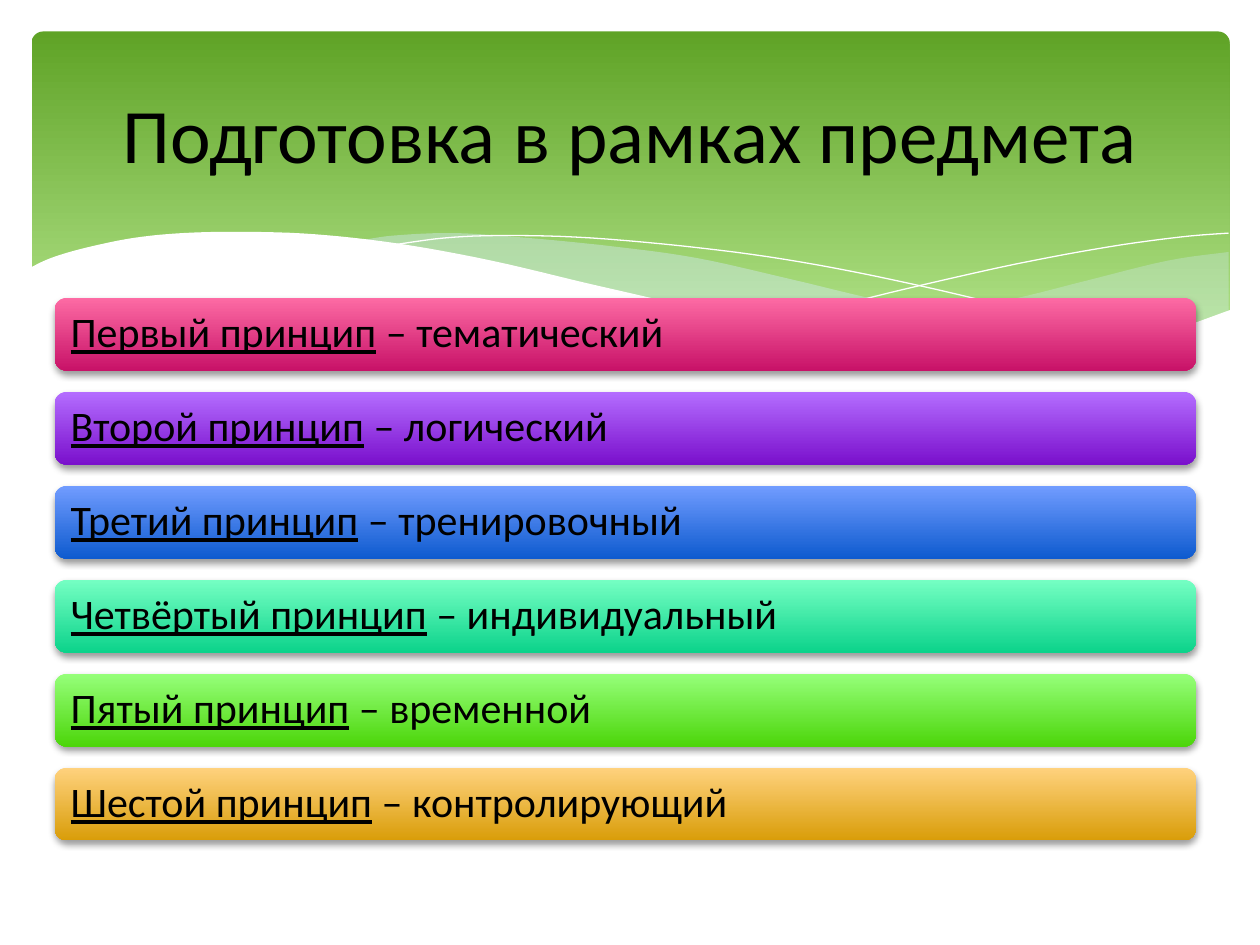
from lxml.etree import SubElement
from pptx import Presentation
from pptx.dml.color import RGBColor
from pptx.enum.shapes import MSO_SHAPE as Shape
from pptx.enum.text import MSO_ANCHOR as Anchor, PP_ALIGN as Align
from pptx.oxml.ns import qn
from pptx.util import Pt

TITLE = "Подготовка в рамках предмета"
PRINCIPLES = [
    ("Первый принцип", "тематический", "FD6BA4", "C81268"),
    ("Второй принцип", "логический", "B46DFF", "7A10CC"),
    ("Третий принцип", "тренировочный", "719CFF", "0E5BCF"),
    ("Четвёртый принцип", "индивидуальный", "75FFC3", "0CD38B"),
    ("Пятый принцип", "временной", "96FF7A", "4CD60A"),
    ("Шестой принцип", "контролирующий", "FFD27E", "D99D09"),
]

RIGHT_WAVE = [
    [(702, 144), (667, 149), (620, 160.6), (580, 170.6), (525, 182), (476, 190.8)],
    [(476, 190.8), (517, 196), (562, 199.4), (601, 199.4), (640, 196), (673, 189),
     (702, 178)],
]
MIDDLE_WAVE = [
    [(643, 196.6), (581, 187), (508, 172.8), (453, 159.8), (399, 147.6), (352, 141),
     (302, 136), (260, 133.2), (225, 134.6), (206, 137.5)],
    [(206, 137.5), (233, 141.1), (261, 146.2), (307, 155.5), (354, 167), (433, 183.6),
     (479, 191.5), (520, 197.3), (565, 200.2), (603, 200.2), (643, 196.6)],
]
FRONT_WAVE = [
    [(703.4, 177), (662, 191), (621, 197), (582, 199.4), (536, 197.3), (481, 190.8),
     (417, 180), (342, 163.4), (281, 149), (228, 139.3), (180, 133.9), (139, 132.5),
     (105, 133.2), (76.3, 136), (48.2, 141.8), (28.8, 147.6), (16.6, 153.4)],
    [(16.6, 237), (703.4, 237)],
]
FALLING_LINE = [[(222, 140.4), (254, 136), (289, 134.6), (338, 136), (401, 141.8),
                 (458, 149.8), (523, 162.7), (598, 180.7), (653, 195.8)]]
RISING_LINE = [[(441, 185), (470, 177), (518, 165), (580, 151), (634, 141),
                (675, 135.4), (702, 133.2)]]

BAR_LEFT, BAR_TOP, BAR_WIDTH, BAR_HEIGHT, BAR_PITCH = 31.2, 170.2, 652.3, 41.6, 53.7
CURVE_STEPS = 6


def color(hex_code):
    return RGBColor.from_string(hex_code)


def smooth(knots):
    if len(knots) < 3:
        return knots
    padded = [knots[0], *knots, knots[-1]]
    curve = [knots[0]]
    for before, start, end, after in zip(padded, padded[1:], padded[2:], padded[3:]):
        for step in range(1, CURVE_STEPS + 1):
            t = step / CURVE_STEPS
            curve.append(tuple(
                b + (c - a) * t / 2 + (2 * a - 5 * b + 4 * c - d) * t**2 / 2
                + (3 * b - a - 3 * c + d) * t**3 / 2
                for a, b, c, d in zip(before, start, end, after)))
    return curve


def add_curve(slide, edges, fill=None, alpha=100, line=None):
    points = [(Pt(x), Pt(y)) for edge in edges for x, y in smooth(edge)]
    builder = slide.shapes.build_freeform(*points[0])
    builder.add_line_segments(points[1:], close=fill is not None)
    curve = builder.convert_to_shape()
    curve.shadow.inherit = False
    if fill:
        curve.fill.solid()
        curve.fill.fore_color.rgb = color(fill)
        tint = curve._element.spPr.find(qn("a:solidFill"))[0]
        SubElement(tint, qn("a:alpha"), val=str(alpha * 1000))
    else:
        curve.fill.background()
    if line:
        curve.line.color.rgb = color(line)
        curve.line.width = Pt(0)
    else:
        curve.line.fill.background()


def add_gradient_box(slide, left, top, width, height, stops, corner=0.17):
    box = slide.shapes.add_shape(Shape.ROUNDED_RECTANGLE,
                                 Pt(left), Pt(top), Pt(width), Pt(height))
    box.adjustments[0] = corner
    box.shadow.inherit = False
    box.line.fill.background()
    box.fill.gradient()
    box.fill.gradient_angle = 270
    for stop, (position, shade) in zip(box.fill.gradient_stops, stops):
        stop.position = position
        stop.color.rgb = color(shade)
    return box


def add_drop_shadow(box):
    effects = box._element.spPr.find(qn("a:effectLst"))
    shadow = SubElement(effects, qn("a:outerShdw"), blurRad=str(Pt(4)),
                        dist=str(Pt(2)), dir="5400000", rotWithShape="0")
    black = SubElement(shadow, qn("a:srgbClr"), val="000000")
    SubElement(black, qn("a:alpha"), val="38000")


def write(frame, *parts, size, align=Align.LEFT, spacing=1.0, underline_first=False):
    frame.word_wrap = True
    frame.vertical_anchor = Anchor.MIDDLE
    paragraph = frame.paragraphs[0]
    paragraph.alignment = align
    paragraph.line_spacing = spacing
    for index, part in enumerate(parts):
        run = paragraph.add_run()
        run.text = part
        run.font.name = "Calibri"
        run.font.size = Pt(size)
        run.font.color.rgb = color("000000")
        run.font.underline = underline_first and index == 0


def main():
    deck = Presentation()
    deck.slide_width, deck.slide_height = Pt(720), Pt(540)
    slide = deck.slides.add_slide(deck.slide_layouts[5])

    add_gradient_box(slide, 18, 18, 684.7, 194.4,
                     [(0, "5FA326"), (0.9, "B2E389")], corner=0.034)
    add_curve(slide, RIGHT_WAVE, fill="D6ECFF", alpha=29)
    add_curve(slide, MIDDLE_WAVE, fill="D6ECFF", alpha=40)
    add_curve(slide, FALLING_LINE, line="FFFFFF")
    add_curve(slide, RISING_LINE, line="FFFFFF")
    add_curve(slide, FRONT_WAVE, fill="FFFFFF")

    for row, (ordinal, principle, light, dark) in enumerate(PRINCIPLES):
        bar = add_gradient_box(slide, BAR_LEFT, BAR_TOP + row * BAR_PITCH,
                               BAR_WIDTH, BAR_HEIGHT, [(0, light), (1, dark)])
        add_drop_shadow(bar)
        write(bar.text_frame, ordinal, f" – {principle}", size=24, spacing=0.9,
              underline_first=True)

    title = slide.shapes.title
    title.left, title.top, title.width, title.height = Pt(36), Pt(26.6), Pt(648), Pt(98.6)
    write(title.text_frame, TITLE, size=44, align=Align.CENTER)
    slide.shapes._spTree.append(title._element)
    deck.save("out.pptx")


if __name__ == "__main__":
    main()
